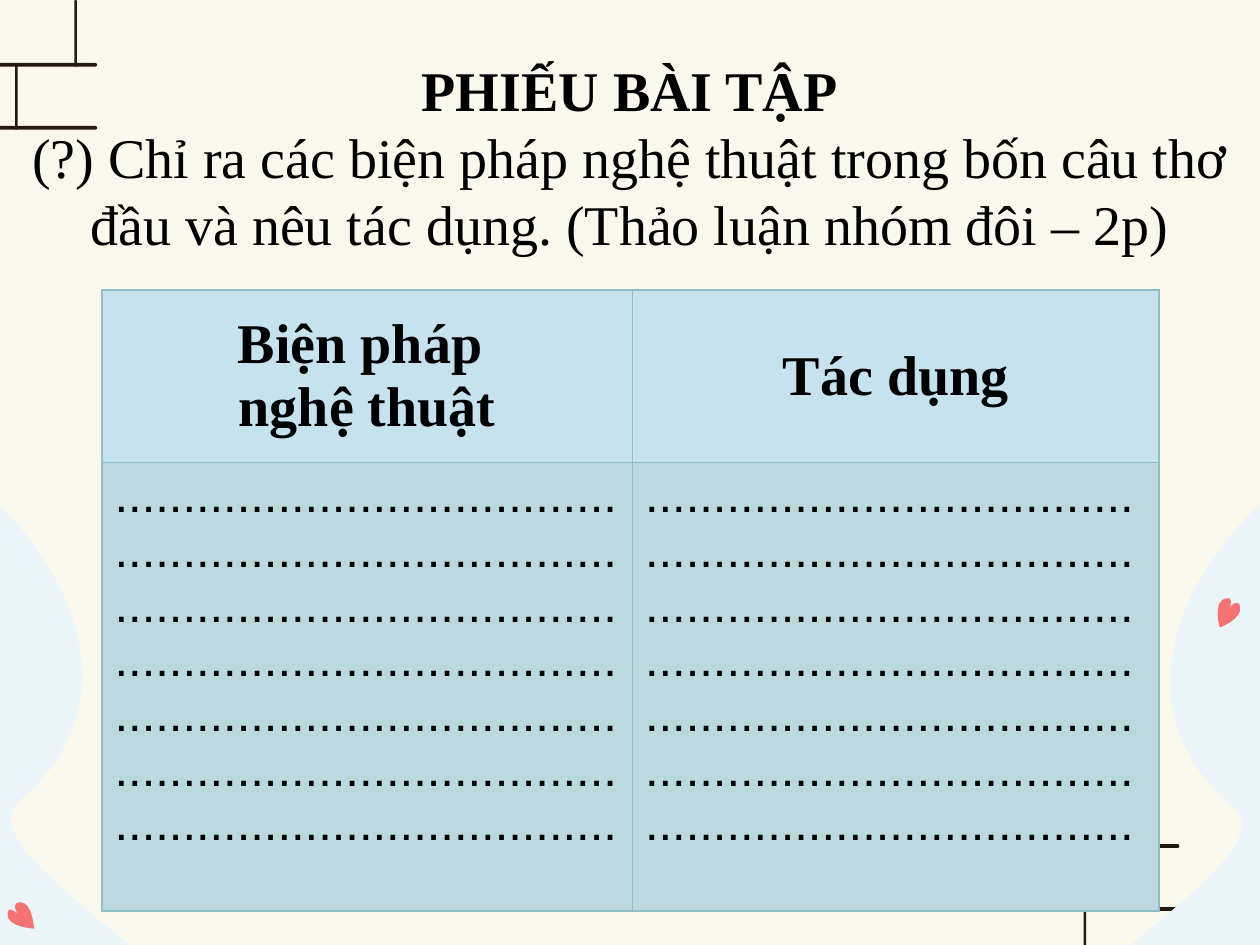
import math

import pptx
import pptx.dml.color
import pptx.enum.shapes
import pptx.enum.text
import pptx.oxml
import pptx.oxml.ns
import pptx.util
from pptx.util import Inches

THEME = {
    "background": "FAF8EC", "brick": "231814", "blob": "EBF5F9", "heart": "F47373",
    "text": "000000", "header": "C6E2EE", "body": "BBD8DD", "border": "8EBEC6",
    "serif": "Times New Roman", "sans": "Arial", "heading_size": 32, "body_size": 28,
}

# Content
TITLE = [
    ("PHIẾU BÀI TẬP", True),
    ("(?) Chỉ ra các biện pháp nghệ thuật trong bốn câu thơ đầu và nêu tác dụng. "
     "(Thảo luận nhóm đôi – 2p)", False),
]
HEADERS = [["Biện pháp ", "nghệ thuật"], ["Tác dụng"]]
# Dots in a line, and how many lines each unbroken group fills
DOTTED_CELLS = [(37, [2, 1, 1, 1, 1, 1]), (36, [1, 3, 1, 1, 1])]
COLUMN_WIDTHS = [4.21, 4.18]
ROW_HEIGHTS = [1.37, 3.56]

# Decoration: bars are left, top, width, height; outlines are a start and
# cubic curves (two control points and an end)
TOP_BRICKS = [(-0.15, 1, 0.92, 0.03), (-0.15, 0.5, 0.92, 0.03),
              (0.12, 0.5, 0.02, 0.53), (0.59, 0, 0.02, 0.53)]
BOTTOM_BRICKS = [(9.21 - x - w, 7.73 - y - h, w, h) for x, y, w, h in TOP_BRICKS]
BLOB_TILT = 18.5
RIGHT_BLOB = [
    (13.94, 3.07),
    (13.69, 2.99), (13.36, 2.93), (12.91, 2.91), (10.43, 2.82), (8.29, 5.14), (9.78, 6.4),
    (10.44, 6.95), (6.5, 8.51), (8.23, 9.77), (8.36, 9.87), (8.5, 9.94), (8.65, 9.99),
    (9.9, 10.4), (11.57, 9.29), (12.72, 9.67), (12.89, 9.73), (13.05, 9.82), (13.2, 9.96),
    (14, 10.71), (14.75, 11.18), (15.37, 11.39), (16.72, 11.84), (17.5, 11.09), (16.98, 9.51),
    (16.42, 7.81), (18.59, 5.98), (16.77, 5.38), (16.63, 5.33), (16.47, 5.29), (16.28, 5.26),
    (16.07, 5.22), (15.88, 5.18), (15.73, 5.13), (14.25, 4.64), (15.2, 3.49), (13.94, 3.07),
]
LEFT_BLOB = [(9.94 - x, y - 0.05) for x, y in RIGHT_BLOB]
LEFT_HEART = [
    (0.13, 7.17), (0.13, 7.17), (0.14, 7.16), (0.16, 7.16), (0.26, 7.16), (0.27, 7.37),
    (0.27, 7.37), (0.27, 7.37), (0.05, 7.36), (0.06, 7.25), (0.06, 7.23), (0.07, 7.23),
    (0.07, 7.22), (0.09, 7.21), (0.14, 7.25), (0.14, 7.25), (0.14, 7.25), (0.1, 7.19),
    (0.13, 7.17),
]
RIGHT_HEART = [
    (9.83, 4.79), (9.83, 4.79), (9.84, 4.8), (9.84, 4.81), (9.87, 4.91), (9.68, 4.98),
    (9.68, 4.98), (9.68, 4.98), (9.62, 4.77), (9.73, 4.75), (9.74, 4.75), (9.75, 4.75),
    (9.76, 4.75), (9.78, 4.77), (9.76, 4.82), (9.76, 4.82), (9.76, 4.82), (9.8, 4.77),
    (9.83, 4.79),
]


def color(name):
    return pptx.dml.color.RGBColor.from_string(THEME[name])


def paint(shape, fill):
    shape.fill.solid()
    shape.fill.fore_color.rgb = color(fill)
    shape.line.fill.background()
    shape.shadow.inherit = False


def add_bricks(slide, bars):
    for bar in bars:
        shape = slide.shapes.add_shape(
            pptx.enum.shapes.MSO_SHAPE.ROUNDED_RECTANGLE, *map(Inches, bar))
        shape.adjustments[0] = 0.5
        paint(shape, "brick")


def rotate(point, degrees):
    x, y = point
    cosine, sine = math.cos(math.radians(degrees)), math.sin(math.radians(degrees))
    return x * cosine - y * sine, x * sine + y * cosine


def add_curved_shape(slide, points, fill, tilt):
    # Draw the outline upright, then turn the shape to its tilt
    upright = [tuple(map(Inches, rotate(point, -tilt))) for point in points]
    builder = slide.shapes.build_freeform(*upright[0])
    builder.add_line_segments(upright[1:], close=True)
    shape = builder.convert_to_shape()
    center_x, center_y = rotate(
        (shape.left + shape.width / 2, shape.top + shape.height / 2), tilt)
    shape.left = round(center_x - shape.width / 2)
    shape.top = round(center_y - shape.height / 2)
    shape.rotation = tilt
    paint(shape, fill)

    # Join each three line segments into one cubic curve
    lines = list(shape._element.iter(pptx.oxml.ns.qn("a:lnTo")))
    for first in range(0, len(points) - 1, 3):
        curve = pptx.oxml.parse_xml(f'<a:cubicBezTo {pptx.oxml.ns.nsdecls("a")}/>')
        lines[first].addprevious(curve)
        for line in lines[first:first + 3]:
            curve.append(line[0])
            line.getparent().remove(line)


def style(paragraph, font, size, bold=False, centered=True):
    paragraph.font.name = THEME[font]
    paragraph.font.size = pptx.util.Pt(THEME[size])
    paragraph.font.bold = bold
    paragraph.font.color.rgb = color("text")
    alignment = pptx.enum.text.PP_ALIGN
    paragraph.alignment = alignment.CENTER if centered else alignment.LEFT


def fill_paragraphs(frame, texts):
    for index, text in enumerate(texts):
        paragraph = frame.add_paragraph() if index else frame.paragraphs[0]
        paragraph.text = text
        yield paragraph


def add_title(slide):
    box = slide.shapes.add_textbox(0, Inches(0.38), Inches(10), Inches(1.72))
    frame = box.text_frame
    frame.word_wrap = True
    frame.vertical_anchor = pptx.enum.text.MSO_ANCHOR.MIDDLE
    paragraphs = fill_paragraphs(frame, [text for text, _ in TITLE])
    for paragraph, (_, bold) in zip(paragraphs, TITLE):
        style(paragraph, "serif", "heading_size", bold)


def format_cell(cell, fill):
    properties = cell._tc.get_or_add_tcPr()
    for side in ("lnL", "lnR", "lnT", "lnB"):
        properties.append(pptx.oxml.parse_xml(
            f'<a:{side} {pptx.oxml.ns.nsdecls("a")} w="12700"><a:solidFill>'
            f'<a:srgbClr val="{THEME["border"]}"/></a:solidFill></a:{side}>'))
    cell.fill.solid()
    cell.fill.fore_color.rgb = color(fill)


def add_worksheet(slide):
    table = slide.shapes.add_table(
        len(ROW_HEIGHTS), len(COLUMN_WIDTHS), Inches(0.81), Inches(2.3),
        Inches(sum(COLUMN_WIDTHS)), Inches(sum(ROW_HEIGHTS))).table
    for column, width in zip(table.columns, COLUMN_WIDTHS):
        column.width = Inches(width)
    for row, height in zip(table.rows, ROW_HEIGHTS):
        row.height = Inches(height)

    for index, (header, (dots, groups)) in enumerate(zip(HEADERS, DOTTED_CELLS)):
        header_cell, body_cell = table.cell(0, index), table.cell(1, index)
        format_cell(header_cell, "header")
        format_cell(body_cell, "body")
        header_cell.vertical_anchor = pptx.enum.text.MSO_ANCHOR.MIDDLE
        for paragraph in fill_paragraphs(header_cell.text_frame, header):
            style(paragraph, "serif", "heading_size", bold=True)
        dotted_text = " ".join("." * dots * lines for lines in groups)
        for paragraph in fill_paragraphs(body_cell.text_frame, [dotted_text]):
            style(paragraph, "sans", "body_size", centered=False)


def main():
    presentation = pptx.Presentation()
    presentation.slide_width = Inches(10)
    presentation.slide_height = Inches(7.5)
    slide = presentation.slides.add_slide(presentation.slide_layouts[6])
    slide.background.fill.solid()
    slide.background.fill.fore_color.rgb = color("background")

    # Decoration, from back to front
    add_bricks(slide, BOTTOM_BRICKS)
    add_curved_shape(slide, RIGHT_BLOB, "blob", BLOB_TILT)
    add_curved_shape(slide, LEFT_BLOB, "blob", -BLOB_TILT)
    add_bricks(slide, TOP_BRICKS)
    add_curved_shape(slide, LEFT_HEART, "heart", -38.8)
    add_curved_shape(slide, RIGHT_HEART, "heart", 32.4)

    # Content
    add_title(slide)
    add_worksheet(slide)
    presentation.save("out.pptx")


if __name__ == "__main__":
    main()
